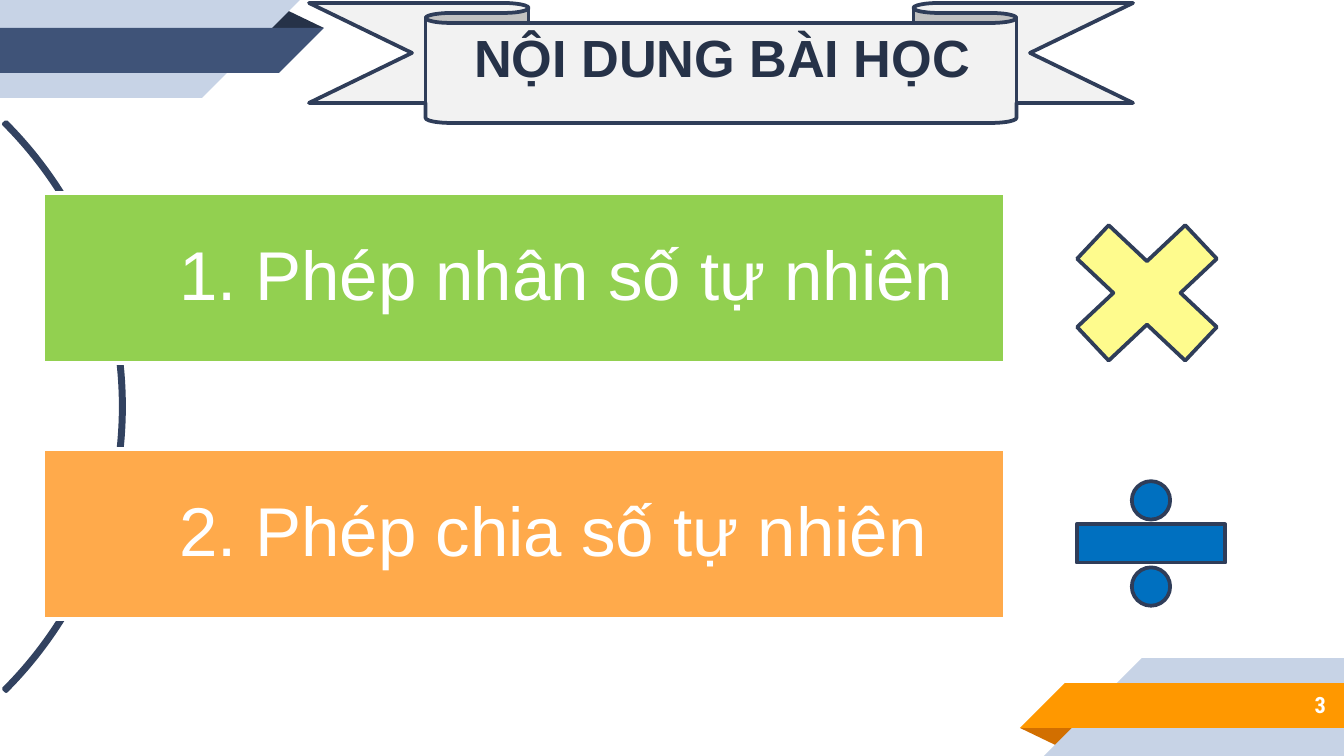
from pptx import Presentation
from pptx.dml.color import RGBColor
from pptx.enum.shapes import MSO_SHAPE as SHAPE
from pptx.enum.text import MSO_ANCHOR as ANCHOR, MSO_AUTO_SIZE as AUTO, PP_ALIGN as ALIGN
from pptx.util import Emu, Pt

PX = 914400 / 134.4
WIDTH, HEIGHT = 1344, 756

WHITE = RGBColor(0xFF, 0xFF, 0xFF)
PALE_BLUE = RGBColor(0xC7, 0xD3, 0xE6)
SLATE = RGBColor(0x3F, 0x53, 0x78)
NAVY = RGBColor(0x26, 0x32, 0x48)
AMBER = RGBColor(0xFF, 0x98, 0x00)
RUST = RGBColor(0xD2, 0x6F, 0x00)
GREEN = RGBColor(0x92, 0xD0, 0x50)
ORANGE = RGBColor(0xFF, 0xAA, 0x4B)
BANNER_GREY = RGBColor(0xF2, 0xF2, 0xF2)
YELLOW = RGBColor(0xFE, 0xFB, 0x8D)
BLUE = RGBColor(0x00, 0x70, 0xC0)
ARC_LINE = RGBColor(0x32, 0x42, 0x60)
OUTLINE = RGBColor(0x2F, 0x3D, 0x59)


def px(*lengths):
    return [Emu(round(length * PX)) for length in lengths]


class SlideBuilder:
    def __init__(self, slide):
        self.slide = slide
        self.shapes = slide.shapes

    def shape(self, kind, box, fill=None, line=None, adjustments=(), rotation=0):
        shape = self.shapes.add_shape(kind, *px(*box))
        shape.shadow.inherit = False
        shape.rotation = rotation
        for index, value in enumerate(adjustments):
            shape.adjustments[index] = value
        if fill is None:
            shape.fill.background()
        else:
            shape.fill.solid()
            shape.fill.fore_color.rgb = fill
        if line is None:
            shape.line.fill.background()
        else:
            shape.line.color.rgb = line
            shape.line.width = Pt(2)
        return shape

    def put_text(self, holder, text, color, align, insets, spacing=1.0, **font):
        """Fill a shape or placeholder; insets are left, top, right, bottom."""
        frame = holder.text_frame
        sides = ("margin_left", "margin_top", "margin_right", "margin_bottom")
        settings = dict(zip(sides, px(*insets)), word_wrap=True,
                        auto_size=AUTO.NONE, vertical_anchor=ANCHOR.MIDDLE)
        for name, value in settings.items():
            setattr(frame, name, value)
        para = frame.paragraphs[0]
        para.alignment = align
        para.line_spacing = spacing
        span = para.add_run()
        span.text = text
        for name, value in font.items():
            setattr(span.font, name, value)
        span.font.color.rgb = color

    def title(self, text, box):
        title = self.shapes.title
        title.left, title.top, title.width, title.height = px(*box)
        self.put_text(title, text, NAVY, ALIGN.CENTER, (13, 0, 13, 30),
                      name="Arial", size=Pt(28), bold=True)
        # Bring the title in front of the banner.
        title._element.getparent().append(title._element)

    def text(self, text, box, color, align, **font):
        holder = self.shapes.add_textbox(*px(*box))
        self.put_text(holder, text, color, align, (13, 13, 13, 13), **font)

    def corner(self, band_color, fold_color, turned=False):
        """Folded bands at top left, or turned by 180° at bottom right."""
        def piece(kind, box, fill, rotation=0, adjustments=()):
            x, y, width, height = box
            if turned:
                x, y = WIDTH - x - width, HEIGHT - y - height
                rotation += 180
            self.shape(kind, (x, y, width, height), fill,
                       adjustments=adjustments, rotation=rotation)

        piece(SHAPE.ISOSCELES_TRIANGLE, (266, 9, 58, 19), fold_color, adjustments=[0.32])
        for y, width, height, fill in ((0, 202, 98, PALE_BLUE), (28, 279, 45, band_color)):
            piece(SHAPE.RECTANGLE, (0, y, width, height), fill)
            piece(SHAPE.RIGHT_TRIANGLE, (width, y, height, height), fill, rotation=90)

    def topic(self, text, box, fill):
        bar = self.shape(SHAPE.RECTANGLE, box, fill, WHITE)
        self.put_text(bar, text, WHITE, ALIGN.LEFT, (136, 13, 13, 13),
                      spacing=0.9, name="Arial", size=Pt(37))


def main():
    deck = Presentation()
    deck.slide_width, deck.slide_height = px(WIDTH, HEIGHT)
    page = SlideBuilder(deck.slides.add_slide(deck.slide_layouts[5]))

    page.corner(SLATE, NAVY)
    page.corner(AMBER, RUST, turned=True)
    page.text("3", (1120, 681, 219, 47), WHITE, ALIGN.RIGHT,
              name="Roboto Condensed", size=Pt(12), bold=True)

    # Arc angles run from 315° to 45°, in the preset's own units.
    page.shape(SHAPE.BLOCK_ARC, (-681, 4, 805, 805), line=ARC_LINE,
               adjustments=(189, 27, 0.004))
    topics = (("1. Phép nhân số tự nhiên", GREEN), ("2. Phép chia số tự nhiên", ORANGE))
    for row, (text, fill) in enumerate(topics):
        page.topic(text, (43, 193 + 256 * row, 962, 170), fill)

    page.shape(SHAPE.DOWN_RIBBON, (309, 3, 824, 120), BANNER_GREY, OUTLINE, (0.167, 0.717))
    page.title("NỘI DUNG BÀI HỌC", (426, 22, 592, 100))
    page.shape(SHAPE.MATH_MULTIPLY, (1043, 195, 208, 196), YELLOW, OUTLINE)
    page.shape(SHAPE.MATH_DIVIDE, (1050, 462, 202, 163), BLUE, OUTLINE)

    deck.save("out.pptx")


if __name__ == "__main__":
    main()
